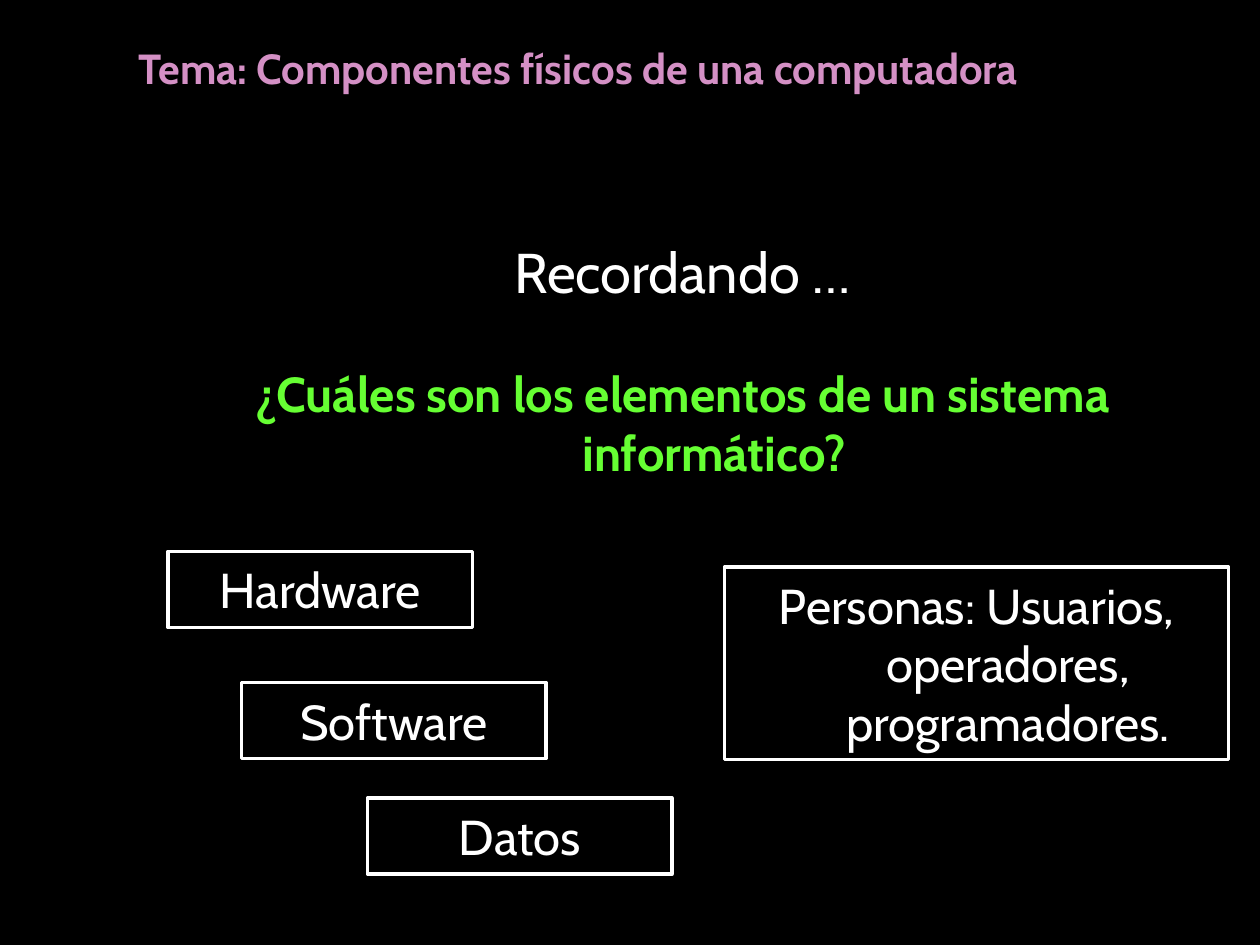
import pptx
import pptx.util
import pptx.dml.color
import pptx.enum.shapes
import pptx.enum.text

Pt = pptx.util.Pt
RGB = pptx.dml.color.RGBColor.from_string
ALIGN = pptx.enum.text.PP_ALIGN
ANCHOR = pptx.enum.text.MSO_ANCHOR

THEME = {
    "font": "Cabin",
    "back": "000000", "white": "FFFFFF", "pink": "D490C5", "green": "66FF33",
    "title": 24, "lead": 32, "body": 28,
    "line": 2, "hang": 36,
}

# Content: text, (left, top, width, height) in points
TITLE = ("Tema: Componentes físicos de una computadora", (72, 21, 600, 36))
LEAD = ("Recordando …", (72, 132, 636, 45.5))
ASK = ("¿Cuáles son los elementos de un sistema informático?",
       (72, 204, 636, 74))
SMALL = (174, 43.5)
PARTS = [
    ("Hardware", (96, 315, *SMALL)),
    ("Software", (138, 390, *SMALL)),
    ("Datos", (210, 456, *SMALL)),
    ("Personas: Usuarios, operadores, programadores.", (414, 324, 288, 110)),
]


def write(shape, text, size, color, bold=False, align=ALIGN.CENTER,
          hang=False, wrap=True):
    frame = shape.text_frame
    frame.text = text
    frame.word_wrap = wrap
    para = frame.paragraphs[0]
    para.alignment = align
    if hang:
        props = para._p.get_or_add_pPr()
        props.set("marL", str(Pt(THEME["hang"])))
        props.set("indent", str(-Pt(THEME["hang"])))
    font = para.runs[0].font
    font.name = THEME["font"]
    font.size = Pt(THEME[size])
    font.bold = bold
    font.color.rgb = RGB(THEME[color])


def label(slide, item, *style, **more):
    text, place = item
    box = slide.shapes.add_textbox(*map(Pt, place))
    write(box, text, *style, **more)


def frame(slide, item):
    text, place = item
    box = slide.shapes.add_shape(
        pptx.enum.shapes.MSO_SHAPE.RECTANGLE, *map(Pt, place))
    box.shadow.inherit = False
    box.fill.background()
    box.line.color.rgb = RGB(THEME["white"])
    box.line.width = Pt(THEME["line"])
    box.text_frame.vertical_anchor = ANCHOR.MIDDLE
    write(box, text, "body", "white", hang=True)


def main():
    deck = pptx.Presentation()
    deck.slide_width, deck.slide_height = Pt(720), Pt(540)
    slide = deck.slides.add_slide(deck.slide_layouts[6])
    slide.background.fill.solid()
    slide.background.fill.fore_color.rgb = RGB(THEME["back"])

    # Headings
    label(slide, TITLE, "title", "pink", bold=True, align=ALIGN.LEFT,
          wrap=False)
    label(slide, ASK, "body", "green", bold=True, hang=True)
    label(slide, LEAD, "lead", "white")

    # Elements of the system
    for part in PARTS:
        frame(slide, part)

    deck.save("out.pptx")


if __name__ == "__main__":
    main()
